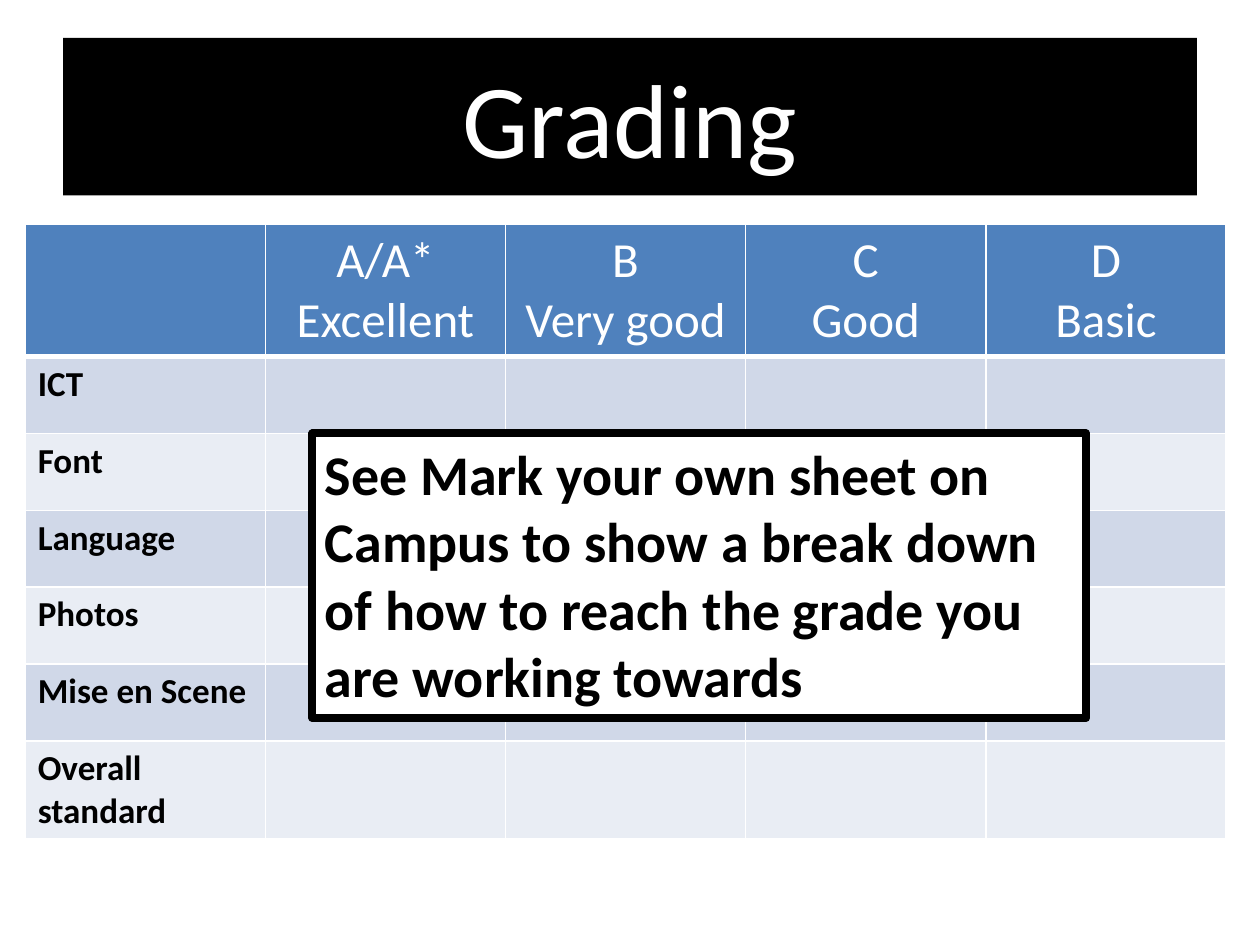
from dataclasses import dataclass

from lxml.etree import SubElement
from pptx import Presentation
from pptx.dml.color import RGBColor
from pptx.enum.text import MSO_ANCHOR, MSO_AUTO_SIZE, PP_ALIGN
from pptx.oxml.ns import qn
from pptx.util import Inches, Pt

WIDE, HIGH = Inches(10), Inches(7.5)
FACE = "Calibri"
HUES = {
    "ink": "000000",
    "paper": "FFFFFF",
    "head": "4F81BD",
    "dark": "D0D8E8",
    "light": "E9EDF4",
}
GRADES = [("A/A*", "Excellent"), ("B", "Very good"), ("C", "Good"), ("D", "Basic")]
SKILLS = ["ICT", "Font", "Language", "Photos", "Mise en Scene", "Overall standard"]
NOTE = (
    "See Mark your own sheet on Campus to show a break down "
    "of how to reach the grade you are working towards"
)


@dataclass(frozen=True)
class Box:
    left: float
    top: float
    width: float
    height: float

    def place(self) -> tuple[int, int, int, int]:
        return (
            round(self.left * WIDE),
            round(self.top * HIGH),
            round(self.width * WIDE),
            round(self.height * HIGH),
        )


@dataclass(frozen=True)
class Style:
    size: int
    hue: str
    bold: bool = False
    align: PP_ALIGN = PP_ALIGN.LEFT


TITLE = Style(60, "paper", align=PP_ALIGN.CENTER)
HEAD = Style(28, "paper", align=PP_ALIGN.CENTER)
SKILL = Style(20, "ink", bold=True)
CALL = Style(32, "ink", bold=True)


def tint(name: str) -> RGBColor:
    return RGBColor.from_string(HUES[name])


def paint(item, name: str) -> None:
    item.fill.solid()
    item.fill.fore_color.rgb = tint(name)


def write(frame, lines: tuple[str, ...], style: Style) -> None:
    for i, line in enumerate(lines):
        para = frame.paragraphs[0] if i == 0 else frame.add_paragraph()
        para.alignment = style.align
        run = para.add_run()
        run.text = line
        run.font.name = FACE
        run.font.size = Pt(style.size)
        run.font.bold = style.bold
        run.font.color.rgb = tint(style.hue)


def edge(cell, base: float) -> None:
    props = cell._tc.get_or_add_tcPr()
    sides = {"lnL": 1, "lnR": 1, "lnT": 1, "lnB": base}
    for i, (side, width) in enumerate(sides.items()):
        line = SubElement(props, qn(f"a:{side}"), w=str(Pt(width)))
        fill = SubElement(line, qn("a:solidFill"))
        SubElement(fill, qn("a:srgbClr"), val=HUES["paper"])
        props.remove(line)
        props.insert(i, line)


def add_title(slide) -> None:
    title = slide.shapes.title
    title.left, title.top, title.width, title.height = Box(0.05, 0.04, 0.9, 1 / 6).place()
    paint(title, "ink")
    title.text_frame.vertical_anchor = MSO_ANCHOR.MIDDLE
    write(title.text_frame, ("Grading",), TITLE)


def add_grid(slide) -> None:
    rows, cols = len(SKILLS) + 1, len(GRADES) + 1
    spot = Box(0.02, 1.78 / 7.5, 0.953, 4.6 / 7.5).place()
    table = slide.shapes.add_table(rows, cols, *spot).table
    for r, row in enumerate(table.rows):
        row.height = Inches(0.61 if r else 0.94)
        for cell in row.cells:
            paint(cell, ("dark" if r % 2 else "light") if r else "head")
            edge(cell, 1 if r else 3)
    for c, lines in enumerate(GRADES, 1):
        write(table.cell(0, c).text_frame, lines, HEAD)
    for r, skill in enumerate(SKILLS, 1):
        write(table.cell(r, 0).text_frame, (skill,), SKILL)


def add_note(slide) -> None:
    note = slide.shapes.add_textbox(*Box(0.248, 3.44 / 7.5, 0.614, 2.26 / 7.5).place())
    paint(note, "paper")
    note.line.color.rgb = tint("ink")
    note.line.width = Pt(4.5)
    note.text_frame.word_wrap = True
    note.text_frame.auto_size = MSO_AUTO_SIZE.SHAPE_TO_FIT_TEXT
    write(note.text_frame, (NOTE,), CALL)


def main() -> None:
    deck = Presentation()
    deck.slide_width, deck.slide_height = WIDE, HIGH
    slide = deck.slides.add_slide(deck.slide_layouts[5])
    add_title(slide)
    add_grid(slide)
    add_note(slide)
    deck.save("out.pptx")


if __name__ == "__main__":
    main()
